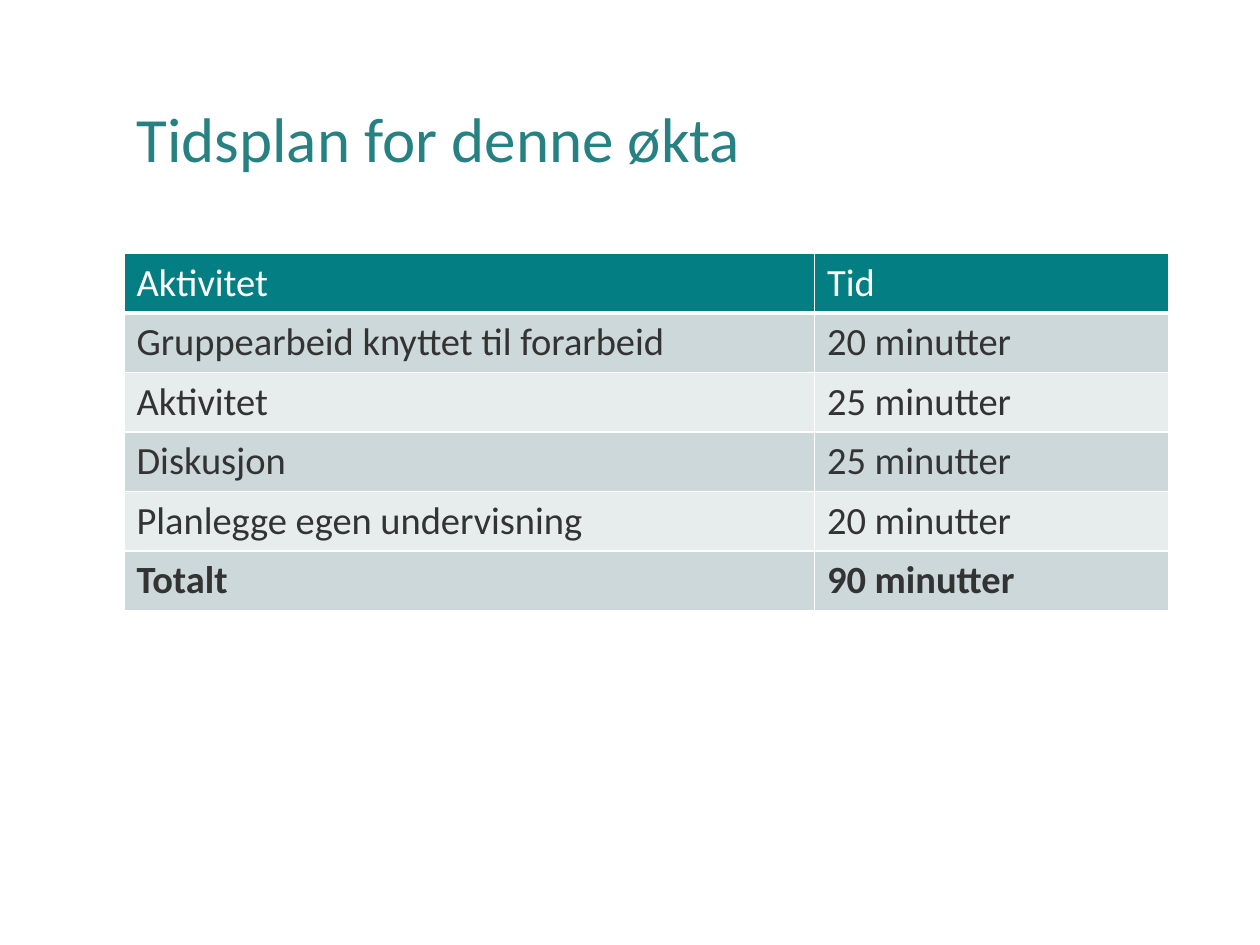
"""Build a session timetable slide with a title and a two-column table."""
import pptx
import pptx.dml.color
import pptx.enum.text
import pptx.oxml.ns
import pptx.util
from lxml import etree
from pptx.util import Cm

TITLE = "Tidsplan for denne økta"
SCHEDULE = [
    ("Aktivitet", "Tid"),
    ("Gruppearbeid knyttet til forarbeid", "20 minutter"),
    ("Aktivitet", "25 minutter"),
    ("Diskusjon", "25 minutter"),
    ("Planlegge egen undervisning", "20 minutter"),
    ("Totalt", "90 minutter"),
]
THEME = {
    "font": "Calibri",
    "title_size": 36,
    "table_size": 22,
    "title": "268183",
    "header": "037F83",
    "header_text": "FFFFFF",
    "body_text": "333333",
    "bands": ("E7ECED", "CCD8D9"),
    "border": "FFFFFF",
}
LEFT, WIDTH = Cm(2.5), Cm(21.06)
TITLE_TOP, TITLE_HEIGHT = Cm(1.02), Cm(3.68)
TABLE_TOP, ROW_HEIGHT = Cm(5.11), Cm(1.2)
ACTIVITY_WIDTH = Cm(13.92)


def color(name):
    return pptx.dml.color.RGBColor.from_string(name)


def style_paragraph(paragraph, size, text_color, bold=False):
    font = paragraph.font
    font.name = THEME["font"]
    font.size = pptx.util.Pt(size)
    font.bold = bold
    font.color.rgb = color(text_color)


def add_borders(cell, widths):
    properties = cell._tc.get_or_add_tcPr()
    for side, points in widths.items():
        line = etree.SubElement(properties, pptx.oxml.ns.qn(f"a:ln{side}"), w=str(pptx.util.Pt(points)))
        fill = etree.SubElement(line, pptx.oxml.ns.qn("a:solidFill"))
        etree.SubElement(fill, pptx.oxml.ns.qn("a:srgbClr"), val=THEME["border"])


def add_title(slide):
    title = slide.shapes.title
    title.left, title.top, title.width, title.height = LEFT, TITLE_TOP, WIDTH, TITLE_HEIGHT
    title.text_frame.text = TITLE
    title.text_frame.vertical_anchor = pptx.enum.text.MSO_ANCHOR.MIDDLE
    paragraph = title.text_frame.paragraphs[0]
    paragraph.alignment = pptx.enum.text.PP_ALIGN.LEFT
    paragraph.line_spacing = 0.9
    style_paragraph(paragraph, THEME["title_size"], THEME["title"])


def add_schedule(slide):
    last = len(SCHEDULE) - 1
    table = slide.shapes.add_table(
        len(SCHEDULE), len(SCHEDULE[0]), LEFT, TABLE_TOP, WIDTH, ROW_HEIGHT * len(SCHEDULE)
    ).table
    table.columns[0].width = ACTIVITY_WIDTH
    table.columns[1].width = WIDTH - ACTIVITY_WIDTH
    for row, texts in enumerate(SCHEDULE):
        table.rows[row].height = ROW_HEIGHT
        is_header = row == 0
        fill = THEME["header"] if is_header else THEME["bands"][row % 2]
        text_color = THEME["header_text"] if is_header else THEME["body_text"]
        widths = {"L": 1, "R": 1, "T": 3 if row == 1 else 1, "B": 3 if is_header else 1}
        for column, text in enumerate(texts):
            cell = table.cell(row, column)
            cell.text = text
            style_paragraph(cell.text_frame.paragraphs[0], THEME["table_size"], text_color, row == last)
            add_borders(cell, widths)
            cell.fill.solid()
            cell.fill.fore_color.rgb = color(fill)


def main():
    presentation = pptx.Presentation()
    presentation.slide_width, presentation.slide_height = Cm(25.4), Cm(19.05)
    slide = presentation.slides.add_slide(presentation.slide_layouts[5])
    add_title(slide)
    add_schedule(slide)
    presentation.save("out.pptx")


if __name__ == "__main__":
    main()
